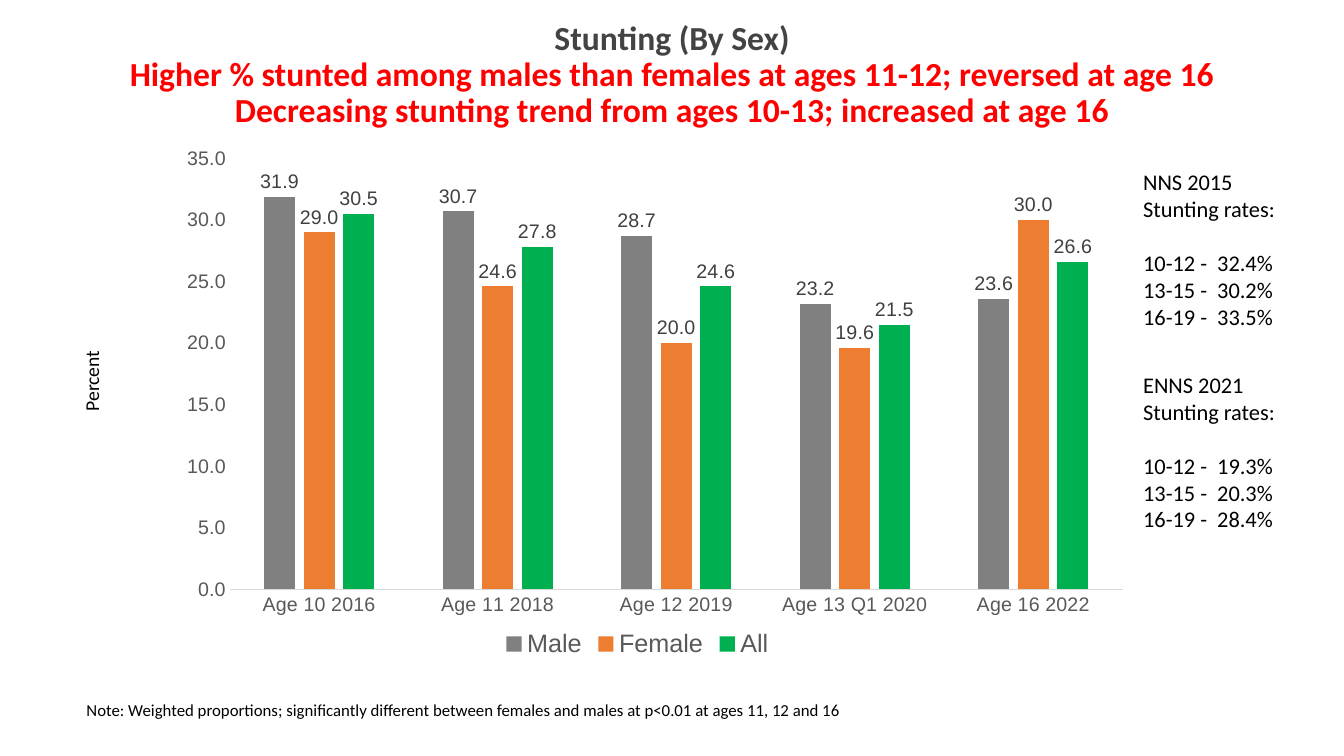
from dataclasses import dataclass

from lxml import etree
from pptx import Presentation
from pptx.chart.data import CategoryChartData
from pptx.dml.color import RGBColor
from pptx.enum.chart import XL_CHART_TYPE, XL_LABEL_POSITION, XL_LEGEND_POSITION, XL_TICK_MARK
from pptx.enum.text import MSO_ANCHOR, MSO_AUTO_SIZE, PP_ALIGN
from pptx.oxml.ns import qn
from pptx.util import Inches, Pt

COLUMNS = XL_CHART_TYPE.COLUMN_CLUSTERED
OUTSIDE_END = XL_LABEL_POSITION.OUTSIDE_END
LEGEND_BOTTOM = XL_LEGEND_POSITION.BOTTOM
NO_TICKS = XL_TICK_MARK.NONE
MIDDLE = MSO_ANCHOR.MIDDLE
CENTER = PP_ALIGN.CENTER
NO_FIT = MSO_AUTO_SIZE.NONE


@dataclass(frozen=True)
class Theme:
    text_font: str = "Calibri"
    chart_font: str = "Arial"
    black: str = "000000"
    heading: str = "434343"
    finding: str = "FF0000"
    axis_text: str = "595959"
    label_text: str = "404040"
    axis_line: str = "D9D9D9"
    male: str = "808080"
    female: str = "ED7D31"
    everyone: str = "00B050"
    title_size: int = 24
    legend_size: int = 18
    rates_size: int = 16
    chart_size: int = 14
    note_size: int = 12


THEME = Theme()


def style_font(font, name, size, color):
    font.name = name
    font.size = Pt(size)
    font.color.rgb = RGBColor.from_string(color)


def add_text(slide, box, lines, size):
    """Add a wrapping text box with one paragraph per line."""
    shape = slide.shapes.add_textbox(*(Inches(value) for value in box))
    text_frame = shape.text_frame
    text_frame.word_wrap = True
    text_frame.text = "\n".join(lines)
    for paragraph in text_frame.paragraphs:
        for run in paragraph.runs:
            style_font(run.font, THEME.text_font, size, THEME.black)
    return shape


presentation = Presentation()
presentation.slide_width = Inches(13.33)
presentation.slide_height = Inches(7.5)
slide = presentation.slides.add_slide(presentation.slide_layouts[5])

# Title
title = slide.shapes.title
title.left, title.top = Inches(0), Inches(0.23)
title.width, title.height = Inches(13.33), Inches(1.04)
title_frame = title.text_frame
title_frame.word_wrap = True
title_frame.auto_size = NO_FIT
title_frame.vertical_anchor = MIDDLE
title_lines = [
    ("Stunting (By Sex)", THEME.heading),
    ("Higher % stunted among males than females at ages 11-12; reversed at age 16", THEME.finding),
    ("Decreasing stunting trend from ages 10-13; increased at age 16", THEME.finding),
]
title_frame.text = "\n".join(line for line, color in title_lines)
for paragraph, (line, color) in zip(title_frame.paragraphs, title_lines):
    paragraph.alignment = CENTER
    paragraph.line_spacing = 0.9
    paragraph.space_before = Pt(0)
    font = paragraph.runs[0].font
    style_font(font, THEME.text_font, THEME.title_size, color)
    font.bold = True

# Note and axis caption
add_text(
    slide,
    (0.76, 6.89, 11.9, 0.3),
    ["Note: Weighted proportions; significantly different between females and males "
     "at p<0.01 at ages 11, 12 and 16"],
    THEME.note_size,
)
axis_caption = add_text(slide, (0.27, 3.37, 1.28, 0.34), ["Percent"], THEME.chart_size)
axis_caption.rotation = 270

# Chart
series_data = [
    ("Male", (31.9, 30.7, 28.7, 23.2, 23.6), THEME.male),
    ("Female", (29.0, 24.6, 20.0, 19.6, 30.0), THEME.female),
    ("All", (30.5, 27.8, 24.6, 21.5, 26.6), THEME.everyone),
]
chart_data = CategoryChartData(number_format="0.0")
chart_data.categories = ["Age 10 2016", "Age 11 2018", "Age 12 2019", "Age 13 Q1 2020", "Age 16 2022"]
for name, values, color in series_data:
    chart_data.add_series(name, values)
chart = slide.shapes.add_chart(
    COLUMNS, Inches(1.51), Inches(1.16), Inches(9.63), Inches(5.42), chart_data
).chart
chart.has_title = False
style_font(chart.font, THEME.chart_font, THEME.chart_size, THEME.black)

chart.has_legend = True
chart.legend.position = LEGEND_BOTTOM
chart.legend.include_in_layout = False
style_font(chart.legend.font, THEME.chart_font, THEME.legend_size, THEME.axis_text)

for axis in (chart.category_axis, chart.value_axis):
    axis.major_tick_mark = axis.minor_tick_mark = NO_TICKS
    axis.has_major_gridlines = False
    style_font(axis.tick_labels.font, THEME.chart_font, THEME.chart_size, THEME.axis_text)
category_line = chart.category_axis.format.line
category_line.color.rgb = RGBColor.from_string(THEME.axis_line)
category_line.width = Pt(0.75)
value_axis = chart.value_axis
value_axis.format.line.fill.background()
value_axis.minimum_scale, value_axis.maximum_scale, value_axis.major_unit = 0, 35, 5
value_axis.tick_labels.number_format = "0.0"
value_axis.tick_labels.number_format_is_linked = False

plot = chart.plots[0]
plot.gap_width = 219
plot.overlap = -27
plot.vary_by_categories = False
for series, (name, values, color) in zip(plot.series, series_data):
    series.format.fill.solid()
    series.format.fill.fore_color.rgb = RGBColor.from_string(color)
    series.invert_if_negative = False
    labels = series.data_labels
    labels.show_value = True
    labels.position = OUTSIDE_END
    labels.number_format = "0.0"
    labels.number_format_is_linked = False
    style_font(labels.font, THEME.chart_font, THEME.chart_size, THEME.label_text)

# Fixed inner plot area, as fractions of the chart
plot_area = chart._chartSpace.chart.plotArea
for old_layout in plot_area.findall(qn("c:layout")):
    plot_area.remove(old_layout)
layout = etree.Element(qn("c:layout"))
manual_layout = etree.SubElement(layout, qn("c:manualLayout"))
layout_values = [
    ("layoutTarget", "inner"), ("xMode", "edge"), ("yMode", "edge"),
    ("x", "0.08"), ("y", "0.076"), ("w", "0.92"), ("h", "0.789"),
]
for tag, value in layout_values:
    etree.SubElement(manual_layout, qn(f"c:{tag}")).set("val", value)
plot_area.insert(0, layout)

# National survey rates
surveys = [
    ("NNS 2015 Stunting rates:", ("32.4%", "30.2%", "33.5%")),
    ("ENNS 2021 Stunting rates:", ("19.3%", "20.3%", "28.4%")),
]
age_groups = ("10-12", "13-15", "16-19")
for index, (heading, rates) in enumerate(surveys):
    lines = [heading] + [f"{ages} -  {rate}" for ages, rate in zip(age_groups, rates)]
    box = (11.24, 1.62 + index * 2.01, 1.8, 2.26)
    survey = add_text(slide, box, lines, THEME.rates_size)
    survey.text_frame.paragraphs[0].space_after = Pt(19.5)

presentation.save("out.pptx")
